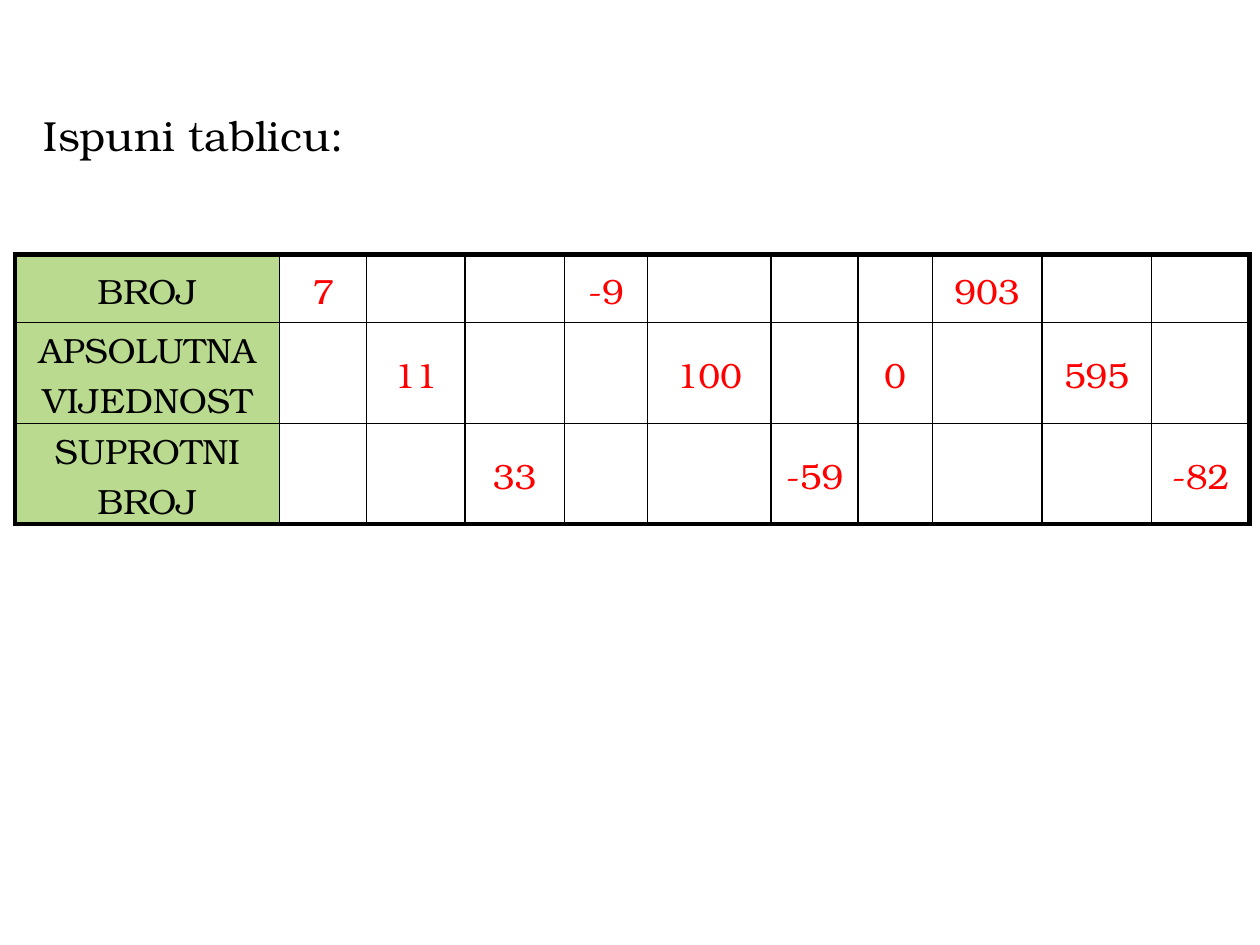
from lxml import etree
from pptx import Presentation
from pptx.dml.color import RGBColor
from pptx.enum import text
from pptx.oxml import ns
from pptx.util import Inches, Pt

FONT = "TeX Gyre Bonum"
COLORS = {"ink": "000000", "value": "FF0000", "head": "B9DA8F"}
WIDTHS = [2.1, 0.69, 0.78, 0.79, 0.66, 0.98, 0.69, 0.59, 0.87, 0.87, 0.78]
HEIGHTS = [0.54, 0.64, 0.64]
HEADS = ["BROJ", "APSOLUTNA VIJEDNOST", "SUPROTNI BROJ"]
# Each given number: (row, column) -> text
VALUES = {(0, 1): "7", (0, 4): "-9", (0, 8): "903",
          (1, 2): "11", (1, 5): "100", (1, 7): "0", (1, 9): "595",
          (2, 3): "33", (2, 6): "-59", (2, 10): "-82"}


def style(par, size, color):
    par.alignment = text.PP_ALIGN.CENTER
    par.font.name = FONT
    par.font.size = Pt(size)
    par.font.bold = False
    par.font.color.rgb = RGBColor.from_string(COLORS[color])


def border(cell, sides):
    props = cell._tc.get_or_add_tcPr()
    for spot, (side, width) in enumerate(sides.items()):
        line = etree.Element(ns.qn("a:ln" + side), w=str(Pt(width)))
        fill = etree.SubElement(line, ns.qn("a:solidFill"))
        etree.SubElement(fill, ns.qn("a:srgbClr"), val=COLORS["ink"])
        props.insert(spot, line)


prs = Presentation()
prs.slide_width, prs.slide_height = Inches(10), Inches(7.5)
slide = prs.slides.add_slide(prs.slide_layouts[5])

# Title
title = slide.shapes.title
title.left, title.top = Inches(0.12), Inches(0.82)
title.width, title.height = Inches(2.84), Inches(0.5)
frame = title.text_frame
frame.text = "Ispuni tablicu:"
frame.word_wrap = True
frame.auto_size = text.MSO_AUTO_SIZE.NONE
frame.vertical_anchor = text.MSO_ANCHOR.MIDDLE
style(frame.paragraphs[0], 24, "ink")

# Table grid
rows, cols = len(HEIGHTS), len(WIDTHS)
table = slide.shapes.add_table(rows, cols, Inches(0.12), Inches(2.02),
                               Inches(sum(WIDTHS)), Inches(sum(HEIGHTS))).table
table.first_row = table.horz_banding = False
for col, width in zip(table.columns, WIDTHS):
    col.width = Inches(width)
for row, height in zip(table.rows, HEIGHTS):
    row.height = Inches(height)

# Cells: thick frame outside, thin lines inside
for r in range(rows):
    for c in range(cols):
        cell = table.cell(r, c)
        cell.margin_left = cell.margin_right = Inches(0.1)
        cell.margin_top = cell.margin_bottom = 0
        cell.vertical_anchor = text.MSO_ANCHOR.MIDDLE
        if c == 0:
            cell.fill.solid()
            cell.fill.fore_color.rgb = RGBColor.from_string(COLORS["head"])
        else:
            cell.fill.background()
        border(cell, {"L": 3 if c == 0 else 1,
                      "R": 3 if c == cols - 1 else 1,
                      "T": 3 if r == 0 else 1,
                      "B": 3 if r == rows - 1 else 1})
        word = HEADS[r] if c == 0 else VALUES.get((r, c))
        if word:
            cell.text = word
            par = cell.text_frame.paragraphs[0]
            style(par, 20, "ink" if c == 0 else "value")
            par.line_spacing = 1.07
            par.space_before = Pt(0 if c == 0 and r > 0 else 6)

prs.save("out.pptx")
